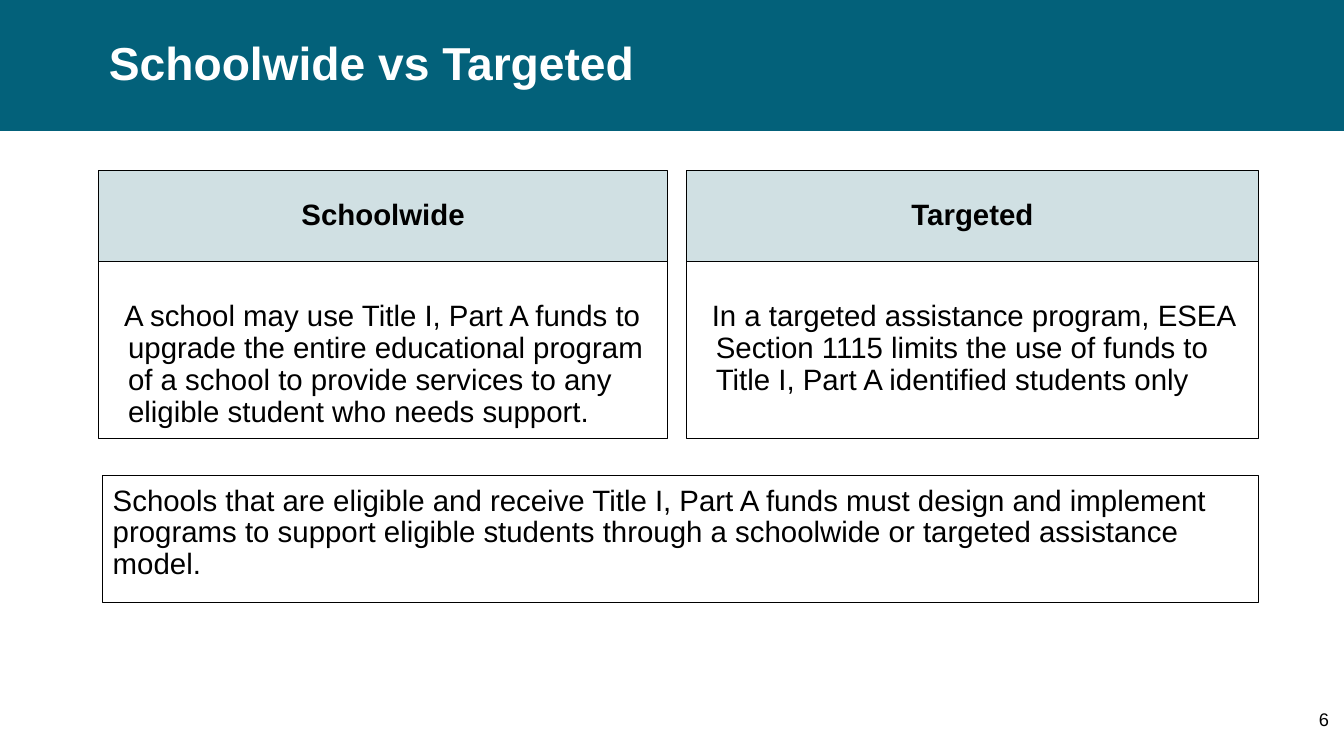
import pptx
import pptx.util
import pptx.dml.color
import pptx.enum.shapes
import pptx.enum.text
import pptx.oxml
import pptx.oxml.ns

Inches = pptx.util.Inches
Pt = pptx.util.Pt
ALIGN = pptx.enum.text.PP_ALIGN
ANCHOR = pptx.enum.text.MSO_ANCHOR
COLORS = {"band": "03617A", "header": "D0E0E3", "text": "000000",
          "line": "000000", "title": "FFFFFF"}
HEADER_HEIGHT = 0.9


def color(name):
    """Return the named colour."""
    return pptx.dml.color.RGBColor.from_string(COLORS[name])


def place(shape, left, top, width, height):
    """Move a shape to a box given in inches."""
    shape.left, shape.top = Inches(left), Inches(top)
    shape.width, shape.height = Inches(width), Inches(height)


def outline(shape, fill=None):
    """Give a shape a thin border and an optional fill."""
    shape.line.color.rgb = color("line")
    shape.line.width = Pt(0.75)
    if fill:
        shape.fill.solid()
        shape.fill.fore_color.rgb = color(fill)
    else:
        shape.fill.background()


def write(shape, text, size=21, bold=False, ink="text", align=ALIGN.LEFT,
          anchor=ANCHOR.TOP, inset=0.05, indent=0, hanging=0, spacing=0.9):
    """Write one formatted paragraph into a shape."""
    frame = shape.text_frame
    frame.word_wrap = True
    frame.auto_size = pptx.enum.text.MSO_AUTO_SIZE.NONE
    frame.vertical_anchor = anchor
    frame.margin_left = frame.margin_right = Inches(0.1)
    frame.margin_top, frame.margin_bottom = Inches(inset), Inches(min(inset, 0.1))
    para = frame.paragraphs[0]
    para.text = text
    para.alignment = align
    para.line_spacing = spacing
    para.space_before = Pt(0)
    properties = para._p.get_or_add_pPr()
    properties.set("marL", str(Inches(indent)))
    properties.set("indent", str(Inches(hanging)))
    properties.append(pptx.oxml.parse_xml(f"<a:buNone {pptx.oxml.ns.nsdecls('a')}/>"))
    para.font.name = "Arial"
    para.font.size = Pt(size)
    para.font.bold = bold
    para.font.color.rgb = color(ink)
    return para


def add_title(page, text, left, width, height):
    """Place the title on a full-width band."""
    band = page.shapes.add_shape(pptx.enum.shapes.MSO_SHAPE.RECTANGLE,
                                 0, 0, Inches(13.33), Inches(height))
    band.shadow.inherit = False
    band.fill.solid()
    band.fill.fore_color.rgb = color("band")
    band.line.fill.background()
    page.shapes._spTree.insert(2, band.element)
    place(page.shapes.title, left, 0, width, height)
    write(page.shapes.title, text, 33, True, "title", anchor=ANCHOR.MIDDLE)


def add_model(header, body, name, description, left, top, width, height):
    """Fill a header and the description below it."""
    place(header, left, top, width, HEADER_HEIGHT)
    outline(header, "header")
    write(header, name, bold=True, align=ALIGN.CENTER, anchor=ANCHOR.MIDDLE)
    place(body, left, top + HEADER_HEIGHT, width, height - HEADER_HEIGHT)
    outline(body)
    write(body, description, inset=0.4, indent=0.19, hanging=-0.04)


def add_summary(page, text, left, top, width, height):
    """Add the outlined closing statement."""
    box = page.shapes.add_textbox(0, 0, 0, 0)
    place(box, left, top, width, height)
    outline(box)
    write(box, text, inset=0.1)


def add_page_number(page, number, left, top, width, height):
    """Add a live slide number."""
    box = page.shapes.add_textbox(0, 0, 0, 0)
    place(box, left, top, width, height)
    para = write(box, "", 13, align=ALIGN.RIGHT, inset=0.1, spacing=1.0)
    para._p.append(pptx.oxml.parse_xml(
        f"<a:fld {pptx.oxml.ns.nsdecls('a')} type='slidenum' "
        "id='{B6F15528-21DE-4FAA-801E-634DDDAF4B2B}'>"
        f"<a:rPr lang='en-US'/><a:t>{number}</a:t></a:fld>"))


def main():
    """Build the comparison slide."""
    deck = pptx.Presentation()
    deck.slide_width, deck.slide_height = Inches(13.33), Inches(7.5)
    deck.element.set("firstSlideNum", "6")
    page = deck.slides.add_slide(deck.slide_layouts.get_by_name("Comparison"))
    _, *bodies = page.placeholders
    add_title(page, "Schoolwide vs Targeted", 0.98, 11.5, 1.3)
    add_model(bodies[0], bodies[1], "Schoolwide",
              "A school may use Title I, Part A funds to upgrade the entire "
              "educational program of a school to provide services to any "
              "eligible student who needs support.", 0.98, 1.69, 5.64, 2.66)
    add_model(bodies[2], bodies[3], "Targeted",
              "In a targeted assistance program, ESEA Section 1115 limits the "
              "use of funds to Title I, Part A identified students only",
              6.81, 1.69, 5.67, 2.66)
    add_summary(page, "Schools that are eligible and receive Title I, Part A "
                "funds must design and implement programs to support eligible "
                "students through a schoolwide or targeted assistance model.",
                1.02, 4.72, 11.46, 1.26)
    add_page_number(page, 6, 12.48, 6.93, 0.8, 0.57)
    deck.save("out.pptx")


if __name__ == "__main__":
    main()
